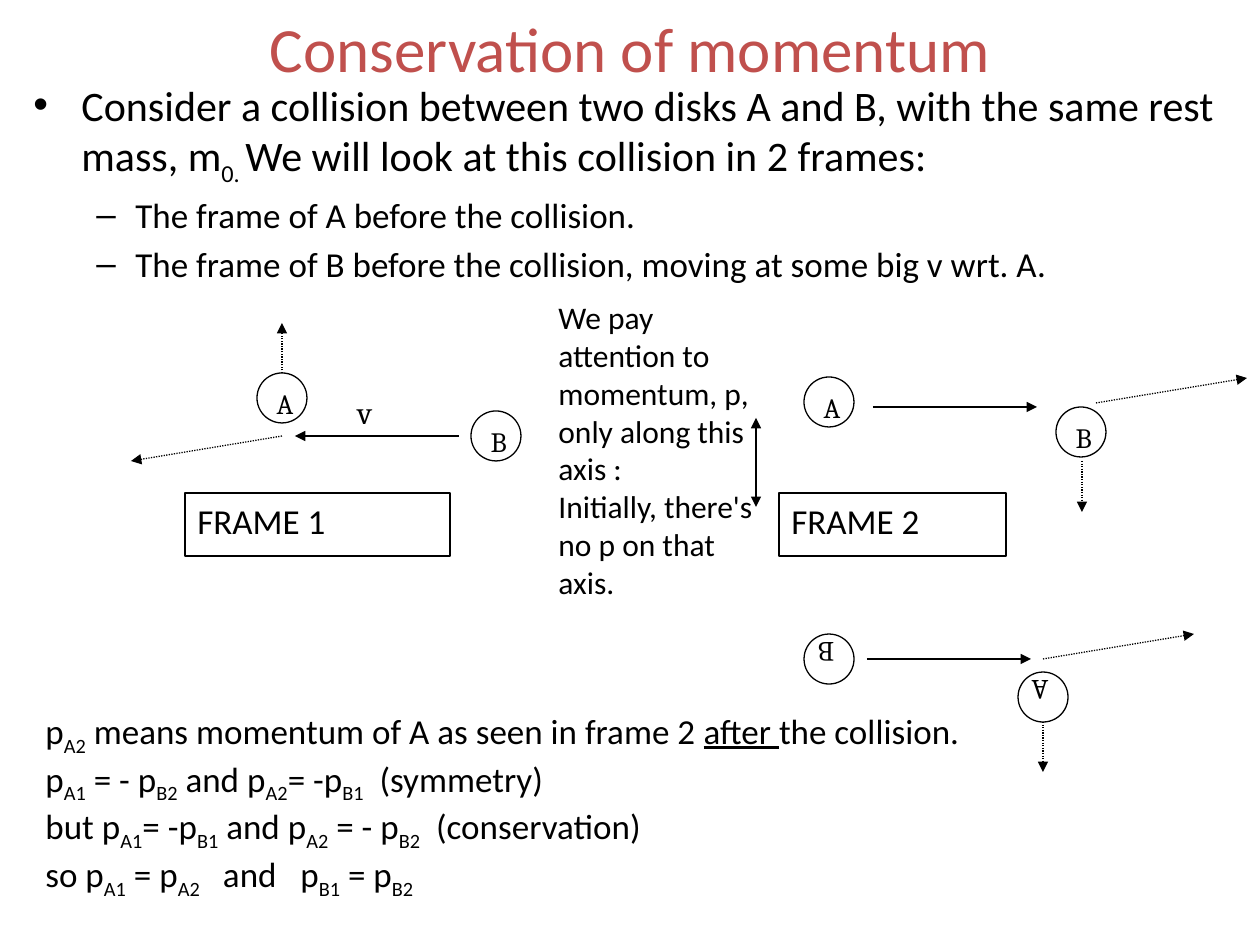
from lxml import etree
from pptx import Presentation
from pptx.dml.color import RGBColor
from pptx.enum.dml import MSO_LINE_DASH_STYLE as DASH
from pptx.enum.shapes import MSO_CONNECTOR, MSO_SHAPE
from pptx.enum.text import MSO_ANCHOR, PP_ALIGN
from pptx.oxml.ns import qn
from pptx.util import Pt

PX = 914400 / 126
BLACK = RGBColor(0x00, 0x00, 0x00)
WHITE = RGBColor(0xFF, 0xFF, 0xFF)
RED = RGBColor(0xC0, 0x50, 0x4D)
DISK = 50
LINE_WIDTH = Pt(0.75)


def px(*values):
    return [round(v * PX) for v in values]


def add_run(p, text, size, font="Calibri", color=BLACK, sub=False, underline=None):
    r = p.add_run()
    r.text = text
    for key, value in dict(size=Pt(size), name=font, underline=underline).items():
        setattr(r.font, key, value)
    r.font.color.rgb = color
    if sub:
        r.font._element.set("baseline", "-25000")


def add_marked(p, text, size):
    """Bars enclose subscripts and asterisks enclose underlined words."""
    for i, part in enumerate(text.split("|")):
        for j, piece in enumerate(part.split("*")):
            if piece:
                add_run(p, piece, size, sub=i % 2 == 1, underline=True if j % 2 else None)


def add_bullet(p, char, margin, indent):
    pPr = p._p.get_or_add_pPr()
    left, first = px(margin, indent)
    pPr.set("marL", str(left))
    pPr.set("indent", str(first))
    etree.SubElement(pPr, qn("a:buFont")).set("typeface", "Arial")
    etree.SubElement(pPr, qn("a:buChar")).set("char", char)


def add_text(s, box, lines, size):
    tf = s.shapes.add_textbox(*px(*box)).text_frame
    tf.word_wrap = True
    for i, line in enumerate(lines):
        p = tf.paragraphs[0] if i == 0 else tf.add_paragraph()
        add_marked(p, line, size)


def add_label(shapes, kind, box, text, size, font, outlined=True, rotation=0):
    sp = shapes.add_shape(kind, *px(*box))
    sp.shadow.inherit = False
    sp.rotation = rotation
    sp.fill.solid()
    sp.fill.fore_color.rgb = WHITE
    if outlined:
        sp.line.color.rgb = BLACK
        sp.line.width = LINE_WIDTH
    else:
        sp.line.fill.background()
    tf = sp.text_frame
    tf.word_wrap = True
    tf.vertical_anchor = MSO_ANCHOR.TOP
    p = tf.paragraphs[0]
    p.alignment = PP_ALIGN.LEFT
    add_run(p, text, size, font)
    return p


def add_arrow(shapes, points, dotted=False, ends=("tailEnd",)):
    line = shapes.add_connector(MSO_CONNECTOR.STRAIGHT, *px(*points))
    line.line.color.rgb = BLACK
    line.line.width = LINE_WIDTH
    if dotted:
        line.line.dash_style = DASH.ROUND_DOT
    ln = line.line._get_or_add_ln()
    for end in ends:
        etree.SubElement(ln, qn(f"a:{end}")).set("type", "triangle")
    etree.SubElement(line._element.spPr, qn("a:effectLst"))


def add_collision(s, origin, disks, arrows, rotation=0):
    x, y = origin
    shapes = s.shapes.add_group_shape().shapes
    for name, dx, dy in disks:
        add_label(shapes, MSO_SHAPE.OVAL, (x + dx, y + dy, DISK, DISK),
                  name, 16, "Cambria", rotation=rotation)
    for x1, y1, x2, y2, dotted in arrows:
        add_arrow(shapes, (x + x1, y + y1, x + x2, y + y2), dotted)


def add_frame_name(s, box, text):
    p = add_label(s.shapes, MSO_SHAPE.RECTANGLE, box, text, 20, "Calibri")
    p.space_after = Pt(10)


def add_title(s, box, text):
    title = s.shapes.title
    for key, value in zip(("left", "top", "width", "height"), px(*box)):
        setattr(title, key, value)
    tf = title.text_frame
    tf.vertical_anchor = MSO_ANCHOR.MIDDLE
    p = tf.paragraphs[0]
    p.alignment = PP_ALIGN.CENTER
    add_run(p, text, 36, color=RED)


def add_body(s, box, items):
    tf = s.shapes.add_textbox(*px(*box)).text_frame
    tf.word_wrap = True
    for i, (level, text) in enumerate(items):
        p = tf.paragraphs[0] if i == 0 else tf.add_paragraph()
        size, char, margin, indent = [(24, "•", 48, -48), (20, "–", 102, -39)][level]
        p.level = level
        p.space_before = Pt(size * 0.2)
        add_bullet(p, char, margin, indent)
        add_marked(p, text, size)


def main():
    prs = Presentation()
    prs.slide_width, prs.slide_height = px(1260, 945)
    s = prs.slides.add_slide(prs.slide_layouts[5])

    add_title(s, (63, 0, 1134, 94), "Conservation of momentum")
    add_body(s, (21, 73, 1218, 252), [
        (0, "Consider a collision between two disks A and B, with the same rest mass, m"
            "|0. |We will look at this collision in 2 frames:"),
        (1, "The frame of A before the collision."),
        (1, "The frame of B before the collision, moving at some big v wrt. A."),
    ])

    add_collision(s, (131, 323), [("A", 126, 50), ("B", 340, 88)], [
        (151, 50, 151, 0, True), (328, 113, 164, 113, False), (151, 113, 0, 138, True)])
    add_label(s.shapes, MSO_SHAPE.RECTANGLE, (345, 387, 63, 38), "v", 18, "Cambria",
              outlined=False)
    add_frame_name(s, (185, 493, 265, 63), "FRAME 1")
    add_frame_name(s, (779, 493, 227, 63), "FRAME 2")
    add_collision(s, (804, 377), [("A", 0, 0), ("B", 252, 30)], [
        (69, 30, 233, 30, False), (278, 84, 278, 135, True), (292, 26, 443, 1, True)])
    add_collision(s, (804, 634), [("A", 214, 38), ("B", 0, 0)], [
        (239, 88, 239, 138, True), (63, 25, 227, 25, False), (239, 25, 390, 0, True)],
        rotation=180)

    add_text(s, (546, 292, 232, 318), [
        "We pay attention to momentum, p, only along this axis :",
        "Initially, there's no p on that axis."], 18)
    add_arrow(s.shapes, (756, 418, 756, 507), ends=("headEnd", "tailEnd"))
    add_text(s, (33, 703, 987, 183), [
        "p|A2| means momentum of A as seen in frame 2 *after *the collision.",
        "p|A1| = - p|B2| and p|A2|= -p|B1|  (symmetry)",
        "but p|A1|= -p|B1| and p|A2| = - p|B2|  (conservation)",
        "so p|A1| = p|A2     |and   p|B1| = p|B2|"], 20)

    prs.save("out.pptx")


if __name__ == "__main__":
    main()
